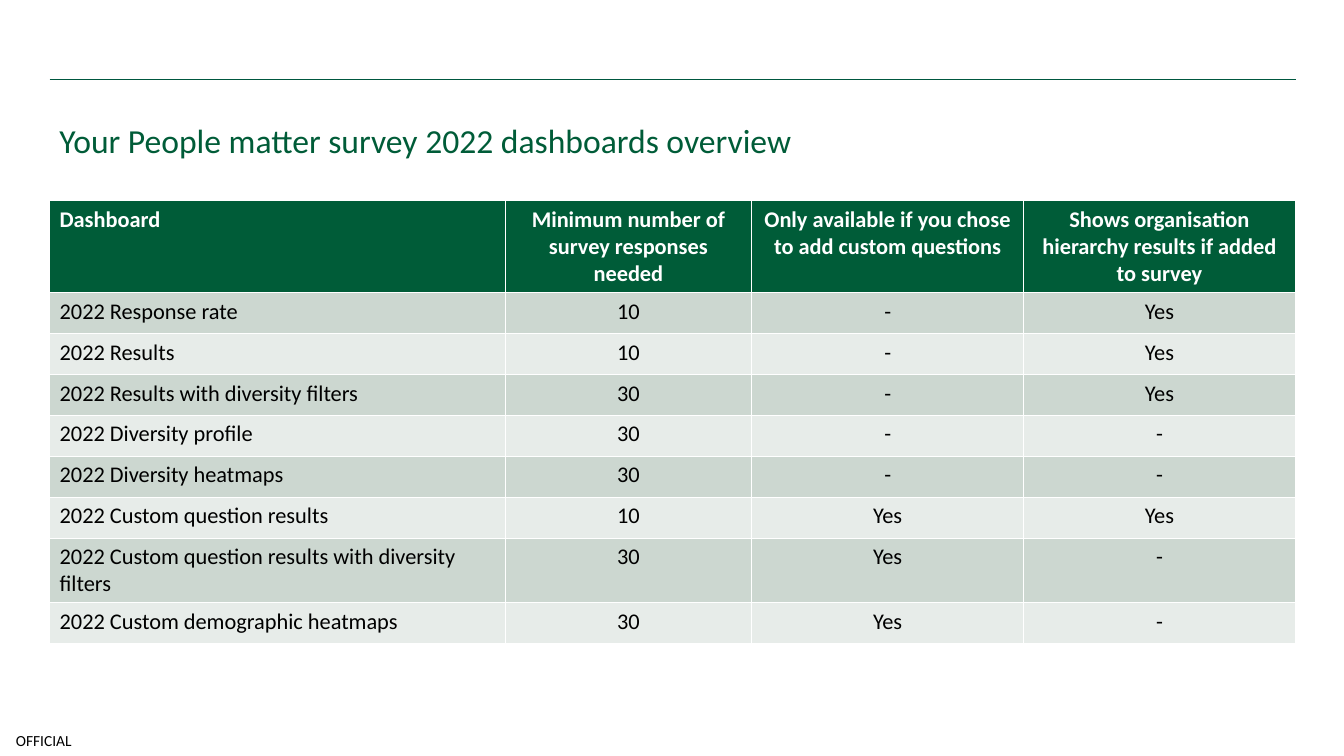
import pptx
import pptx.util
import pptx.dml.color
import pptx.enum.shapes
import pptx.enum.text
import lxml.etree

Pt = pptx.util.Pt
RGB = pptx.dml.color.RGBColor
ALIGN = pptx.enum.text.PP_ALIGN
MIDDLE = pptx.enum.text.MSO_ANCHOR.MIDDLE

GREEN = RGB(0x00, 0x5C, 0x38)
RULE = RGB(0x00, 0x57, 0x3F)
DARK = RGB(0xCC, 0xD7, 0xD0)
LIGHT = RGB(0xE7, 0xEC, 0xE9)
WHITE = RGB(0xFF, 0xFF, 0xFF)
BLACK = RGB(0x00, 0x00, 0x00)

LEFT, WIDTH = 35.4, 890
COLS = [325.4, 176.2, 194.2, 194.2]
HEAD, ROW, TALL = 65.8, 29.2, 46.2

ROWS = [
    ["Dashboard", "Minimum number of survey responses needed",
     "Only available if you chose to add custom questions",
     "Shows organisation hierarchy results if added to survey"],
    ["2022 Response rate", "10", "-", "Yes"],
    ["2022 Results", "10", "-", "Yes"],
    ["2022 Results with diversity filters", "30", "-", "Yes"],
    ["2022 Diversity profile", "30", "-", "-"],
    ["2022 Diversity heatmaps", "30", "-", "-"],
    ["2022 Custom question results", "10", "Yes", "Yes"],
    ["2022 Custom question results with diversity filters", "30", "Yes", "-"],
    ["2022 Custom demographic heatmaps", "30", "Yes", "-"],
]
HEIGHTS = [HEAD] + [ROW] * 6 + [TALL, ROW]


def style(para, size, color, align=ALIGN.LEFT, bold=False):
    para.alignment = align
    para.font.name = "Calibri"
    para.font.size = Pt(size)
    para.font.color.rgb = color
    para.font.bold = bold


deck = pptx.Presentation()
deck.slide_width, deck.slide_height = Pt(960), Pt(540)
slide = deck.slides.add_slide(deck.slide_layouts[6])
shapes = slide.shapes

# Top rule
rule = shapes.add_connector(pptx.enum.shapes.MSO_CONNECTOR.STRAIGHT,
                            Pt(LEFT), Pt(56.6), Pt(LEFT + WIDTH), Pt(56.6))
rule.line.color.rgb = RULE
rule.line.width = Pt(1)
lxml.etree.SubElement(rule._element.spPr, pptx.oxml.ns.qn("a:effectLst"))

# Security label
label = shapes.add_textbox(Pt(0), Pt(517.7), Pt(62.6), Pt(22.3))
frame = label.text_frame
frame.margin_left = frame.margin_right = 0
frame.margin_top = frame.margin_bottom = 0
frame.vertical_anchor = MIDDLE
frame.word_wrap = True
frame.text = "OFFICIAL"
style(frame.paragraphs[0], 11, BLACK, ALIGN.CENTER)

# Title
title = shapes.add_textbox(Pt(LEFT), Pt(64.1), Pt(WIDTH), Pt(65.5))
frame = title.text_frame
frame.vertical_anchor = MIDDLE
frame.word_wrap = True
frame.text = "Your People matter survey 2022 dashboards overview"
frame.paragraphs[0].line_spacing = 1.2
style(frame.paragraphs[0], 24, GREEN)

# Dashboard table
table = shapes.add_table(len(ROWS), len(COLS), Pt(LEFT), Pt(143.4),
                         Pt(WIDTH), Pt(sum(HEIGHTS))).table
for col, width in zip(table.columns, COLS):
    col.width = Pt(width)
for r, (texts, height) in enumerate(zip(ROWS, HEIGHTS)):
    table.rows[r].height = Pt(height)
    head = r == 0
    fill = GREEN if head else DARK if r % 2 else LIGHT
    for c, text in enumerate(texts):
        cell = table.cell(r, c)
        cell.text = text
        cell.fill.solid()
        cell.fill.fore_color.rgb = fill
        style(cell.text_frame.paragraphs[0], 16, WHITE if head else BLACK,
              ALIGN.CENTER if c else ALIGN.LEFT, head)

deck.save("out.pptx")
